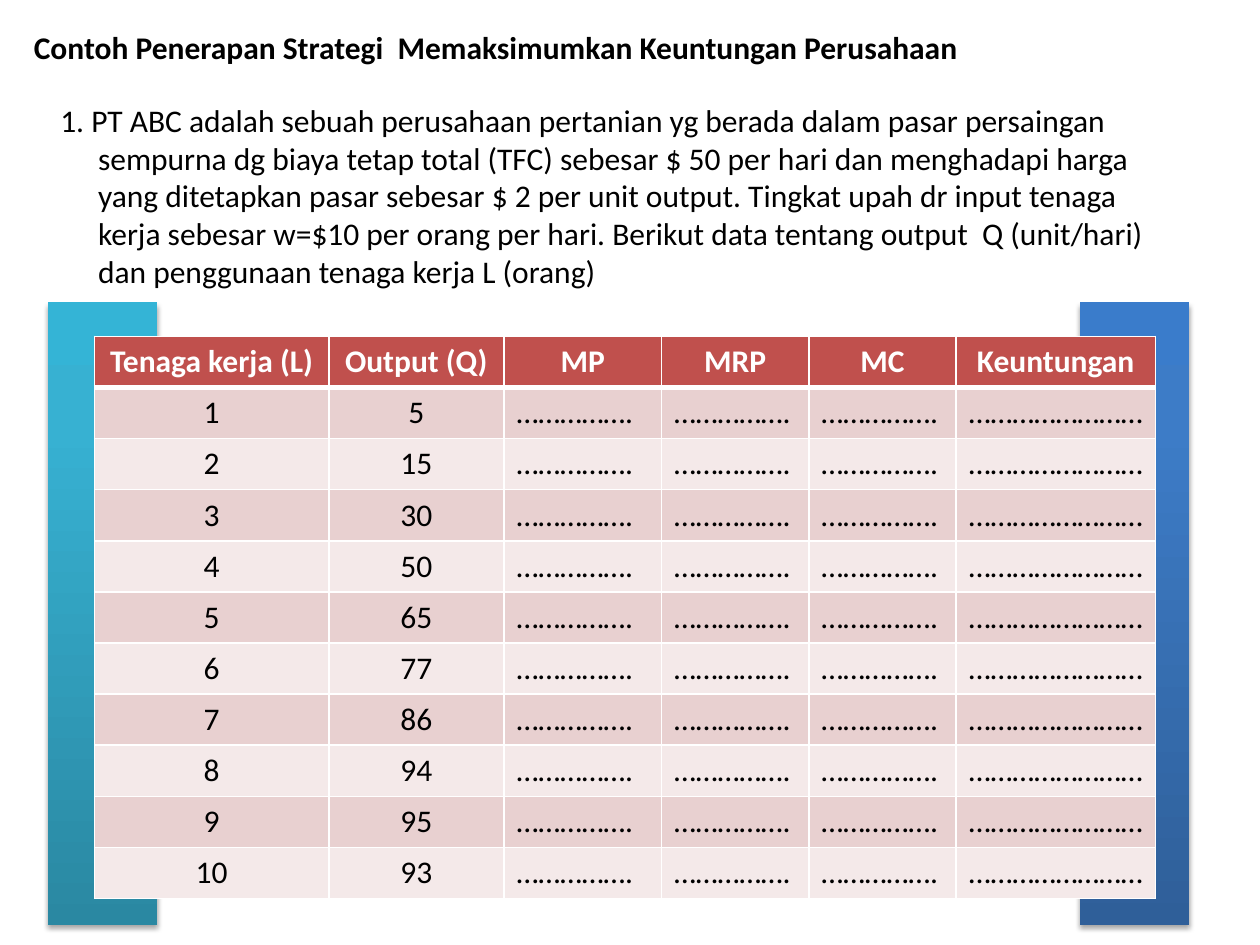
from lxml.etree import SubElement
from pptx import Presentation
from pptx.dml.color import RGBColor
from pptx.enum.shapes import MSO_SHAPE as Shape
from pptx.enum.text import MSO_AUTO_SIZE as AutoSize, MSO_ANCHOR as Anchor, PP_ALIGN as Align
from pptx.oxml import parse_xml
from pptx.oxml.ns import nsdecls, qn
from pptx.util import Inches, Pt

BLACK = RGBColor(0x00, 0x00, 0x00)
WHITE = RGBColor(0xFF, 0xFF, 0xFF)
HEADER_RED = RGBColor(0xC0, 0x50, 0x4D)
BANDS = [RGBColor(0xE8, 0xD0, 0xD0), RGBColor(0xF4, 0xE9, 0xE9)]
BLUES = [RGBColor(0x2F, 0x5F, 0x99), RGBColor(0x3D, 0x7C, 0xC7), RGBColor(0x3A, 0x7C, 0xCB)]
TEALS = [RGBColor(0x2A, 0x88, 0xA2), RGBColor(0x37, 0xB1, 0xD2), RGBColor(0x34, 0xB4, 0xD6)]


def add_run(para, text, color=BLACK, bold=False):
    span = para.add_run()
    span.text = text
    span.font.name = "Calibri"
    span.font.size = Pt(18)
    span.font.bold = bold
    span.font.color.rgb = color


def set_border(cell, side, width):
    line = SubElement(cell._tc.get_or_add_tcPr(), qn(f"a:ln{side}"), w=str(Pt(width)))
    fill = SubElement(line, qn("a:solidFill"))
    SubElement(fill, qn("a:srgbClr"), val=str(WHITE))


deck = Presentation()
deck.slide_width = Inches(10)
deck.slide_height = Inches(7.5)
page = deck.slides.add_slide(deck.slide_layouts[6])

# Side bars: vertical gradient, dark at the bottom, with a soft shadow
for left, colors in [(8.57, BLUES), (0.38, TEALS)]:
    bar = page.shapes.add_shape(Shape.RECTANGLE, Inches(left), Inches(2.4), Inches(0.87), Inches(4.94))
    bar.fill.gradient()
    bar.fill.gradient_angle = 90
    stops = bar.fill._fill._gradFill.find(qn("a:gsLst"))
    stops.clear()
    for position, color in zip((0, 80, 100), colors):
        stop = SubElement(stops, qn("a:gs"), pos=str(position * 1000))
        SubElement(stop, qn("a:srgbClr"), val=str(color))
    bar.line.fill.background()
    bar._element.spPr.append(parse_xml(
        f'<a:effectLst {nsdecls("a")}><a:outerShdw blurRad="{Pt(3.1)}" dist="{Pt(1.8)}" '
        'dir="5400000" rotWithShape="0"><a:srgbClr val="000000"><a:alpha val="35000"/>'
        '</a:srgbClr></a:outerShdw></a:effectLst>'))

# Production table, with blanks to fill in
headers = ["Tenaga kerja (L)", "Output (Q)", "MP", "MRP", "MC", "Keuntungan"]
widths = [1.86, 1.39, 1.25, 1.17, 1.17, 1.58]
outputs = [5, 15, 30, 50, 65, 77, 86, 94, 95, 93]
blanks = ["…………….", "…………….", "…………….", "……………………"]
rows = [headers]
for labor, output in enumerate(outputs, start=1):
    rows.append([str(labor), str(output)] + blanks)

table = page.shapes.add_table(len(rows), len(headers), Inches(0.75), Inches(2.67),
                              Inches(8.42), Inches(4.42)).table
for column, width in zip(table.columns, widths):
    column.width = Inches(width)
for r, row in enumerate(rows):
    is_header = r == 0
    for c, text in enumerate(row):
        cell = table.cell(r, c)
        for side in "LRTB":
            thick = (is_header and side == "B") or (r == 1 and side == "T")
            set_border(cell, side, 3 if thick else 1)
        cell.fill.solid()
        cell.fill.fore_color.rgb = HEADER_RED if is_header else BANDS[(r - 1) % 2]
        if c >= 2 and not is_header:
            cell.margin_right = Inches(0.05)  # keeps the dotted blanks on one line
        para = cell.text_frame.paragraphs[0]
        para.alignment = Align.CENTER if is_header or c < 2 else Align.LEFT
        add_run(para, text, WHITE if is_header else BLACK, is_header)

# Title
title = page.shapes.add_textbox(Inches(0.17), Inches(0.17), Inches(7.59), Inches(0.4))
title.text_frame.word_wrap = False
title.text_frame.auto_size = AutoSize.SHAPE_TO_FIT_TEXT
add_run(title.text_frame.paragraphs[0],
        "Contoh Penerapan Strategi  Memaksimumkan Keuntungan Perusahaan", bold=True)

# Problem statement with a hanging indent
problem = page.shapes.add_textbox(Inches(0.38), Inches(0.75), Inches(9.12), Inches(1.62))
problem.text_frame.word_wrap = True
problem.text_frame.auto_size = AutoSize.SHAPE_TO_FIT_TEXT
problem.text_frame.vertical_anchor = Anchor.TOP
para = problem.text_frame.paragraphs[0]
indents = para._p.get_or_add_pPr()
indents.set("marL", str(Inches(0.3)))
indents.set("indent", str(-Inches(0.3)))
add_run(para, "1. PT ABC adalah sebuah perusahaan pertanian yg berada dalam pasar persaingan "
              "sempurna dg biaya tetap total (TFC) sebesar $ 50 per hari dan menghadapi harga "
              "yang ditetapkan pasar sebesar $ 2 per unit output. Tingkat upah dr input tenaga "
              "kerja sebesar w=$10 per orang per hari. Berikut data tentang output  Q (unit/hari) "
              "dan penggunaan tenaga kerja L (orang)")

deck.save("out.pptx")
